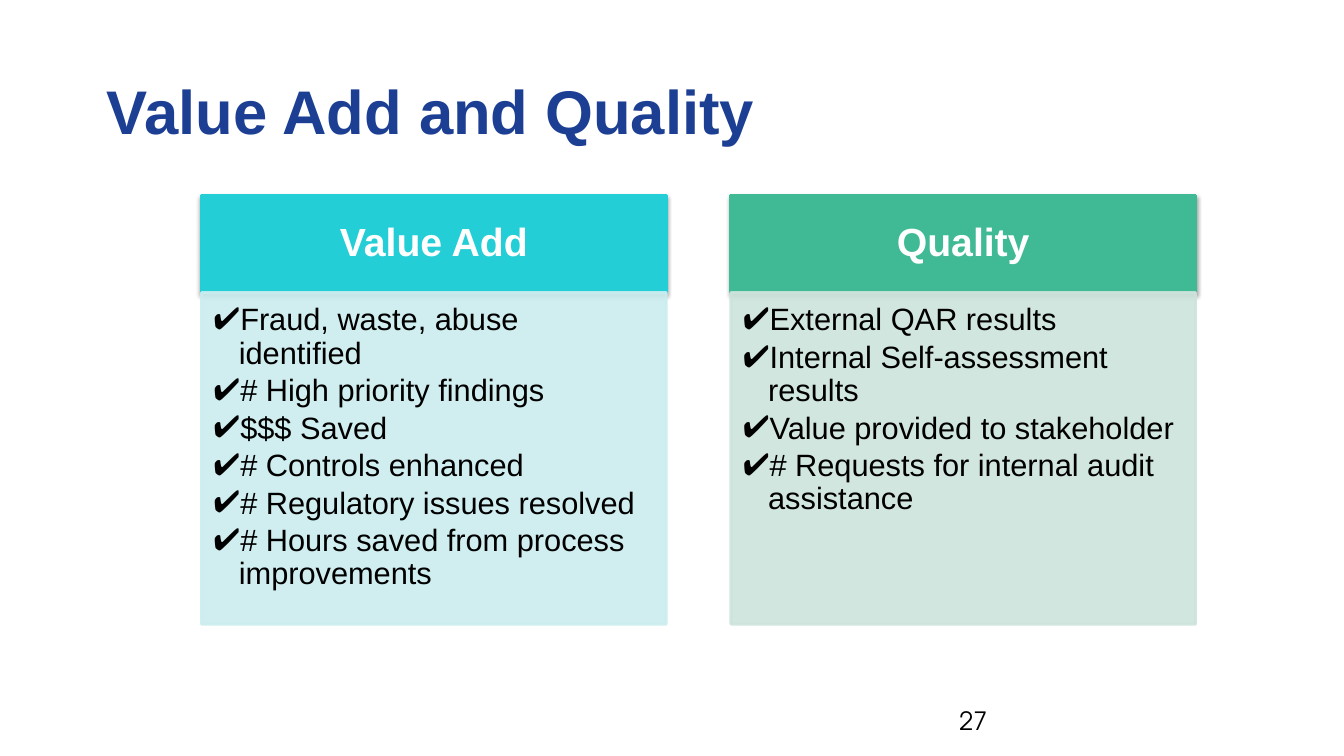
from lxml import etree
from pptx import Presentation
from pptx.dml.color import RGBColor
from pptx.enum.shapes import MSO_SHAPE
from pptx.enum.text import MSO_ANCHOR, PP_ALIGN
from pptx.oxml.ns import qn
from pptx.util import Cm, Pt

RECTANGLE = MSO_SHAPE.RECTANGLE
TOP, MIDDLE = MSO_ANCHOR.TOP, MSO_ANCHOR.MIDDLE
LEFT, CENTER = PP_ALIGN.LEFT, PP_ALIGN.CENTER

NAVY = RGBColor(0x1C, 0x3F, 0x94)
WHITE = RGBColor(0xFF, 0xFF, 0xFF)
BLACK = RGBColor(0x00, 0x00, 0x00)
TURQUOISE = RGBColor(0x24, 0xCE, 0xD7)
PALE_TURQUOISE = RGBColor(0xCB, 0xED, 0xEF)
GREEN = RGBColor(0x40, 0xB9, 0x95)
PALE_GREEN = RGBColor(0xCD, 0xE4, 0xDB)

TITLE_ONLY = 5
CARD_LEFT, CARD_STEP, CARD_WIDTH = 5.08, 13.34, 11.71
HEADER_TOP, HEADER_HEIGHT, BODY_HEIGHT = 4.93, 2.44, 8.36

CARDS = [
    ("Value Add", TURQUOISE, PALE_TURQUOISE, [
        "Fraud, waste, abuse identified",
        "# High priority findings",
        "$$$ Saved",
        "# Controls enhanced",
        "# Regulatory issues resolved",
        "# Hours saved from process improvements",
    ]),
    ("Quality", GREEN, PALE_GREEN, [
        "External QAR results",
        "Internal Self-assessment results",
        "Value provided to stakeholder",
        "# Requests for internal audit assistance",
    ]),
]


def style_font(para, size, color, bold=False, name="Arial"):
    """Format every run of a paragraph."""
    for span in para.runs:
        span.font.name = name
        span.font.size = Pt(size)
        span.font.bold = bold
        span.font.color.rgb = color


def set_frame(box, anchor, left, top, right, bottom):
    """Set wrapping, anchor and insets in centimetres; return the frame."""
    frame = box.text_frame
    frame.word_wrap = True
    frame.vertical_anchor = anchor
    frame.margin_left, frame.margin_top = Cm(left), Cm(top)
    frame.margin_right, frame.margin_bottom = Cm(right), Cm(bottom)
    return frame


def add_panel(page, left, top, height, color):
    """Add a card-wide rectangle with matching fill and line."""
    panel = page.shapes.add_shape(
        RECTANGLE, Cm(left), Cm(top), Cm(CARD_WIDTH), Cm(height))
    panel.shadow.inherit = False
    panel.fill.solid()
    panel.fill.fore_color.rgb = color
    panel.line.color.rgb = color
    panel.line.width = Pt(2)
    return panel


def add_alpha(color_element, percent):
    """Set the opacity of a colour element."""
    etree.SubElement(color_element, qn("a:alpha"), val=str(percent * 1000))


def add_shadow(panel):
    """Give a panel a soft shadow below it."""
    effects = panel._element.spPr.find(qn("a:effectLst"))
    shadow = etree.SubElement(
        effects, qn("a:outerShdw"), blurRad=str(Pt(3.1)), dist=str(Pt(1.6)),
        dir="5400000", rotWithShape="0")
    add_alpha(etree.SubElement(shadow, qn("a:srgbClr"), val=str(BLACK)), 38)


def add_check_bullet(para):
    """Give a paragraph a hanging check mark."""
    properties = para._p.get_or_add_pPr()
    properties.set("marL", str(Cm(0.64)))
    properties.set("indent", str(Cm(-0.66)))
    color = etree.SubElement(properties, qn("a:buClr"))
    etree.SubElement(color, qn("a:srgbClr"), val=str(BLACK))
    etree.SubElement(properties, qn("a:buFont"), typeface="Arial")
    etree.SubElement(properties, qn("a:buChar"), char="✔")


def add_header(page, left, text, color):
    """Add the heading panel of a card."""
    header = add_panel(page, left, HEADER_TOP, HEADER_HEIGHT, color)
    add_shadow(header)
    frame = set_frame(header, MIDDLE, 0.56, 0.3, 0.56, 0.3)
    frame.text = text
    para = frame.paragraphs[0]
    para.alignment = CENTER
    para.line_spacing = 0.9
    style_font(para, 28, WHITE, bold=True)


def add_body(page, left, items, color):
    """Add the translucent panel with the checklist of a card."""
    body = add_panel(page, left, HEADER_TOP + HEADER_HEIGHT, BODY_HEIGHT, color)
    for color_element in body._element.spPr.iter(qn("a:srgbClr")):
        add_alpha(color_element, 90)
    frame = set_frame(body, TOP, 0.3, 0.3, 0.4, 0.43)
    frame.text = "\n".join(items)
    for index, para in enumerate(frame.paragraphs):
        add_check_bullet(para)
        para.alignment = LEFT
        para.line_spacing = 0.9
        para.space_before = Pt(3 if index else 0)
        style_font(para, 22, BLACK)


def set_title(page, text):
    """Place and format the title placeholder."""
    title = page.shapes.title
    title.left, title.top = Cm(2.44), Cm(1.07)
    title.width, title.height = Cm(21.67), Cm(3.4)
    frame = set_frame(title, MIDDLE, 0.25, 0, 0.25, 0)
    frame.text = text
    frame.paragraphs[0].alignment = LEFT
    style_font(frame.paragraphs[0], 44, NAVY, bold=True)


def add_page_number(page, text):
    """Add the page number at the foot of the slide."""
    box = page.shapes.add_textbox(Cm(23.93), Cm(17.65), Cm(7.62), Cm(1.02))
    frame = set_frame(box, MIDDLE, 0.25, 0.13, 0.25, 0.13)
    frame.text = text
    style_font(frame.paragraphs[0], 18, BLACK, name="TeX Gyre Adventor")


def main():
    """Build and save the slide."""
    deck = Presentation()
    deck.slide_width, deck.slide_height = Cm(33.87), Cm(19.05)
    page = deck.slides.add_slide(deck.slide_layouts[TITLE_ONLY])
    set_title(page, "Value Add and Quality")
    add_page_number(page, "27")
    for index, (heading, color, pale_color, items) in enumerate(CARDS):
        left = CARD_LEFT + index * CARD_STEP
        add_header(page, left, heading, color)
        add_body(page, left, items, pale_color)
    deck.save("out.pptx")


if __name__ == "__main__":
    main()
